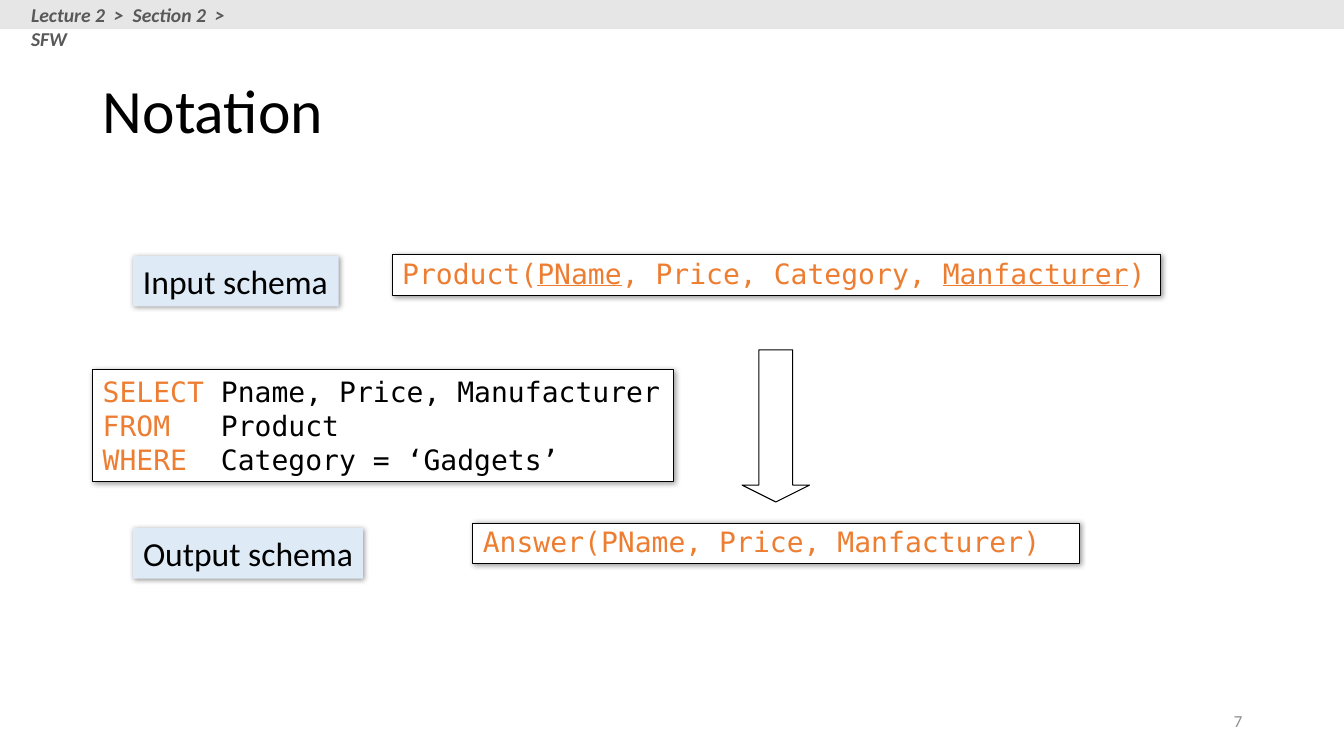
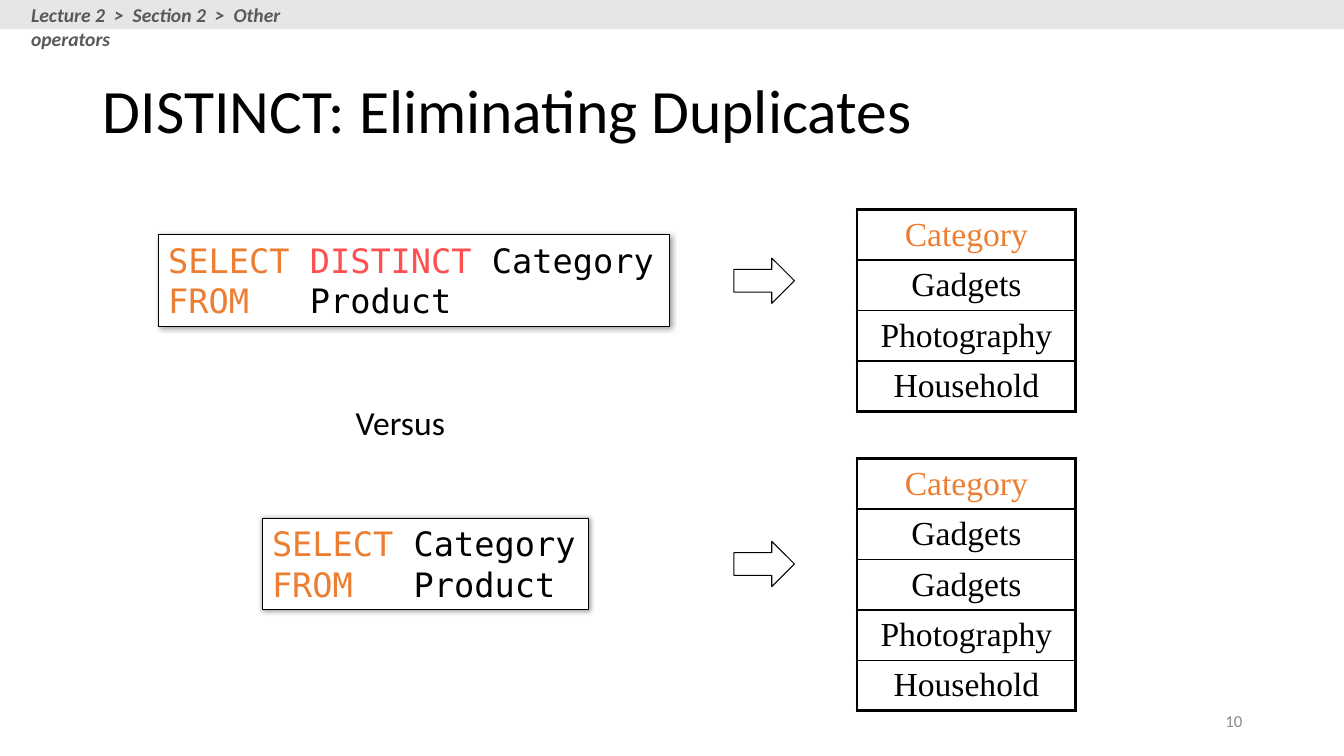
"""Build two lecture slides on SQL notation and DISTINCT."""
from dataclasses import dataclass
from typing import NamedTuple

from pptx import Presentation
from pptx import util as u
from pptx.dml import color
from pptx.enum import shapes, text
from pptx.oxml import ns, parse_xml
from pptx.slide import Slide

PX = 9144
HUES = {
    "ink": "000000", "key": "ED7D31", "red": "FF5050", "white": "FFFFFF",
    "pale": "DEEBF7", "band": "E7E6E6", "crumb": "595959", "page": "8C8C8C",
}
SANS, MONO, SERIF = "Calibri", "DejaVu Sans Mono", "Times New Roman"
ALIGN = text.PP_ALIGN
MID = text.MSO_ANCHOR.MIDDLE
KIND = shapes.MSO_SHAPE


class Rect(NamedTuple):
    """Left, top, width and height in px."""
    x: int
    y: int
    w: int
    h: int


class Run(NamedTuple):
    """A stretch of text with its own colour."""
    words: str
    hue: str = "ink"
    under: bool = False


Lines = list[list[Run]]


@dataclass
class Box:
    """A filled box with a shadow and text."""
    rect: Rect
    lines: Lines
    size: int = 20
    font: str = MONO
    fill: str = "white"
    edge: str = "ink"
    wrap: bool = False
    space: float = 1.0


@dataclass
class Arrow:
    """A hollow block arrow."""
    rect: Rect
    kind: shapes.MSO_SHAPE
    head: float = 0.5


@dataclass
class Grid:
    """A table of one column with a header."""
    x: int
    y: int
    rows: list[str]
    wide: int = 217
    high: int = 50


@dataclass
class Page:
    """The content of one slide."""
    title: str
    crumb: str
    crumb_w: int
    num: str
    boxes: list[Box]
    arrows: list[Arrow]
    grids: list[Grid]


def rgb(hue: str) -> color.RGBColor:
    """Look up a colour by name."""
    return color.RGBColor.from_string(HUES[hue])


def emu(rect: Rect) -> list[u.Emu]:
    """Turn px into EMU."""
    return [u.Emu(n * PX) for n in rect]


def write(frame, lines: Lines, *, size: int, font: str = SANS, wrap: bool = True,
          align=ALIGN.LEFT, anchor=text.MSO_ANCHOR.TOP, space: float = 1.0,
          bold: bool = False, slant: bool = False) -> None:
    """Fill a text frame with formatted runs."""
    frame.word_wrap = wrap
    frame.vertical_anchor = anchor
    for i, line in enumerate(lines):
        para = frame.add_paragraph() if i else frame.paragraphs[0]
        para.alignment, para.line_spacing = align, space
        for item in line:
            run = para.add_run()
            run.text = item.words
            face = run.font
            face.name, face.size = font, u.Pt(size)
            face.bold, face.italic, face.underline = bold, slant, item.under
            face.color.rgb = rgb(item.hue)


def shape(slide: Slide, kind: shapes.MSO_SHAPE, rect: Rect,
          fill: str = "", edge: str = ""):
    """Add a flat shape with an optional fill and edge."""
    form = slide.shapes.add_shape(kind, *emu(rect))
    form.shadow.inherit = False
    if fill:
        form.fill.solid()
        form.fill.fore_color.rgb = rgb(fill)
    else:
        form.fill.background()
    if edge:
        form.line.color.rgb = rgb(edge)
        form.line.width = u.Pt(0.75)
    else:
        form.line.fill.background()
    return form


def label(slide: Slide, rect: Rect, words: str, hue: str, **style) -> None:
    """Add a plain text box."""
    box = slide.shapes.add_textbox(*emu(rect))
    write(box.text_frame, [[Run(words, hue)]], **style)


def draw_box(slide: Slide, box: Box) -> None:
    """Draw a box with a soft shadow."""
    form = shape(slide, KIND.RECTANGLE, box.rect, box.fill, box.edge)
    form.element.spPr.find(ns.qn("a:effectLst")).append(parse_xml(
        f'<a:outerShdw {ns.nsdecls("a")} blurRad="50800" dist="12700" '
        f'dir="2700000" algn="tl" rotWithShape="0"><a:srgbClr val="{HUES["ink"]}">'
        '<a:alpha val="40000"/></a:srgbClr></a:outerShdw>'))
    write(form.text_frame, box.lines, size=box.size, font=box.font,
          wrap=box.wrap, space=box.space)


def draw_arrow(slide: Slide, arrow: Arrow) -> None:
    """Draw a hollow arrow."""
    form = shape(slide, arrow.kind, arrow.rect, edge="ink")
    form.adjustments[0], form.adjustments[1] = 0.5, arrow.head


def rule(cell, **sides: float) -> None:
    """Set the cell borders in points."""
    for side, width in sides.items():
        cell._tc.get_or_add_tcPr().append(parse_xml(
            f'<a:ln{side} {ns.nsdecls("a")} w="{u.Pt(width)}"><a:solidFill>'
            f'<a:srgbClr val="{HUES["ink"]}"/></a:solidFill></a:ln{side}>'))


def draw_grid(slide: Slide, grid: Grid) -> None:
    """Draw a table with a heavy frame and header."""
    count = len(grid.rows)
    rect = Rect(grid.x, grid.y, grid.wide, grid.high * count)
    table = slide.shapes.add_table(count, 1, *emu(rect)).table
    table.first_row = table.horz_banding = False
    thick, thin = 2.25, 1
    for i, words in enumerate(grid.rows):
        cell = table.cell(i, 0)
        rule(cell, L=thick, R=thick, T=thick if i < 2 else thin,
             B=thick if i in (0, count - 1) else thin)
        cell.fill.solid()
        cell.fill.fore_color.rgb = rgb("white")
        write(cell.text_frame, [[Run(words, "ink" if i else "key")]],
              size=24, font=SERIF, align=ALIGN.CENTER)
        cell.vertical_anchor = MID


def draw(deck, page: Page) -> Slide:
    """Add a slide with its shared frame and its content."""
    slide = deck.slides.add_slide(deck.slide_layouts[5])
    title = slide.shapes.title
    title.left, title.top, title.width, title.height = emu(Rect(92, 40, 1150, 145))
    write(title.text_frame, [[Run(page.title)]], size=44, anchor=MID, space=0.9)
    shape(slide, KIND.RECTANGLE, Rect(0, 0, 1333, 29), "band")
    label(slide, Rect(21, -2, page.crumb_w, 34), page.crumb, "crumb",
          size=14, bold=True, slant=True)
    label(slide, Rect(942, 695, 300, 40), page.num, "page",
          size=12, align=ALIGN.RIGHT, anchor=MID)
    for box in page.boxes:
        draw_box(slide, box)
    for arrow in page.arrows:
        draw_arrow(slide, arrow)
    for grid in page.grids:
        draw_grid(slide, grid)
    return slide


def tag(y: int, wide: int, words: str) -> Box:
    """Make a pale schema label."""
    return Box(Rect(132, y, wide, 50), [[Run(words)]], 24, SANS, "pale", "")


def main() -> None:
    """Build and save the deck."""
    deck = Presentation()
    deck.slide_width, deck.slide_height = u.Emu(1333 * PX), u.Emu(750 * PX)
    product = [Run("FROM   ", "key"), Run("Product")]
    draw(deck, Page(
        "Notation", "Lecture 2  >  Section 2  >  SFW", 254, "7",
        [
            Box(Rect(92, 367, 576, 111), [
                [Run("SELECT ", "key"), Run("Pname, Price, Manufacturer")],
                product,
                [Run("WHERE", "key"), Run("  Category = ‘Gadgets’")],
            ]),
            Box(Rect(389, 253, 762, 40), [[
                Run("Product(", "key"), Run("PName", "key", True),
                Run(", Price, Category, ", "key"),
                Run("Manfacturer", "key", True), Run(")", "key"),
            ]], wrap=True, space=0.9),
            Box(Rect(469, 519, 602, 40),
                [[Run("Answer(PName, Price, Manfacturer)", "key")]],
                wrap=True, space=0.9),
            tag(254, 204, "Input schema"),
            tag(524, 228, "Output schema"),
        ],
        [Arrow(Rect(736, 347, 67, 151), KIND.DOWN_ARROW, 0.25)], []))

    head, goods = "Category", ["Gadgets", "Photography", "Household"]
    slide = draw(deck, Page(
        "DISTINCT: Eliminating Duplicates",
        "Lecture 2  >  Section 2  >  Other operators", 345, "10",
        [
            Box(Rect(157, 233, 507, 91), [
                [Run("SELECT ", "key"), Run("DISTINCT ", "red"), Run(head)],
                product,
            ], 24),
            Box(Rect(260, 514, 324, 91),
                [[Run("SELECT ", "key"), Run(head)], product], 24),
        ],
        [Arrow(Rect(728, y, 60, 45), KIND.RIGHT_ARROW) for y in (256, 537)],
        [Grid(850, 208, [head, *goods]),
         Grid(850, 455, [head, goods[0], *goods])]))
    label(slide, Rect(343, 394, 130, 50), "Versus", "ink", size=24)
    deck.save("out.pptx")


if __name__ == "__main__":
    main()
